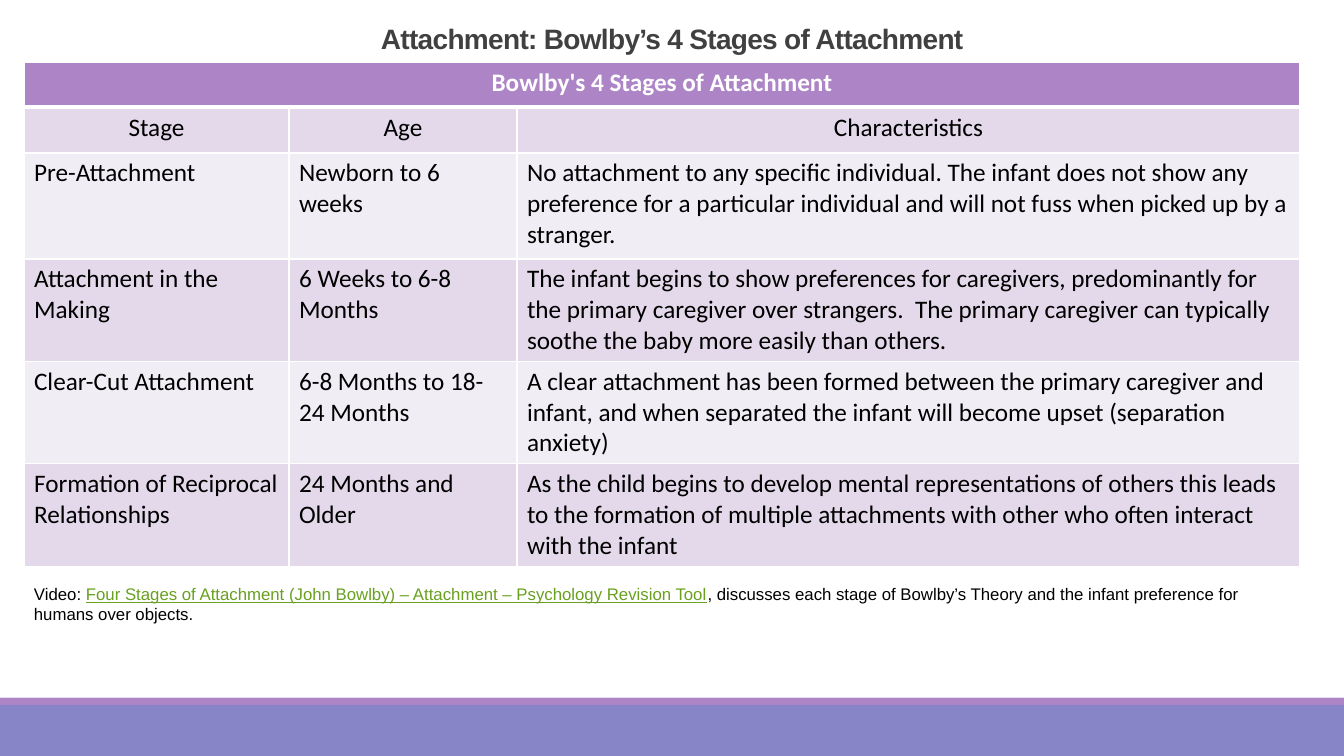
"""Builds the slide on Bowlby's four stages of attachment."""
from dataclasses import dataclass

from lxml import etree
from pptx import Presentation
from pptx.dml.color import RGBColor
from pptx.enum.shapes import MSO_SHAPE
from pptx.enum.text import MSO_ANCHOR, MSO_AUTO_SIZE, PP_ALIGN
from pptx.oxml.ns import qn
from pptx.util import Emu, Pt

RECTANGLE = MSO_SHAPE.RECTANGLE
BOTTOM, TOP = MSO_ANCHOR.BOTTOM, MSO_ANCHOR.TOP
FIXED = MSO_AUTO_SIZE.NONE
CENTER, LEFT = PP_ALIGN.CENTER, PP_ALIGN.LEFT

HEADING = "Attachment: Bowlby’s 4 Stages of Attachment"
BANNER = "Bowlby's 4 Stages of Attachment"
STAGES = [
    ("Stage", "Age", "Characteristics"),
    ("Pre-Attachment", "Newborn to 6 weeks",
     "No attachment to any specific individual. The infant does not show any preference "
     "for a particular individual and will not fuss when picked up by a stranger."),
    ("Attachment in the Making", "6 Weeks to 6-8 Months",
     "The infant begins to show preferences for caregivers, predominantly for the primary "
     "caregiver over strangers.  The primary caregiver can typically soothe the baby more "
     "easily than others."),
    ("Clear-Cut Attachment", "6-8 Months to 18-24 Months",
     "A clear attachment has been formed between the primary caregiver and infant, and when "
     "separated the infant will become upset (separation anxiety)"),
    ("Formation of Reciprocal Relationships", "24 Months and Older",
     "As the child begins to develop mental representations of others this leads to the "
     "formation of multiple attachments with other who often interact with the infant"),
]
VIDEO_NOTE = [
    ("Video: ", False),
    ("Four Stages of Attachment (John Bowlby) – Attachment – Psychology Revision Tool", True),
    (", discusses each stage of Bowlby’s Theory and the infant preference for humans over "
     "objects.", False),
]

SLIDE_SIZE = (1344, 756)
HEADING_BOX = (115, 18, 1114, 42)
TABLE_ORIGIN = (24, 62)
COLUMN_WIDTHS = [265, 228, 783]
ROW_HEIGHTS = [45, 46, 106, 101, 101, 101]
NOTE_BOX = (24, 579, 1276, 50)
FOOTER_TOP, STRIPE_HEIGHT = 698, 7


@dataclass(frozen=True)
class Theme:
    heading_font: str = "Arial"
    table_font: str = "Calibri"
    heading_size: int = 20
    table_size: int = 18
    note_size: int = 12
    heading: str = "404040"
    text: str = "000000"
    white: str = "FFFFFF"
    link: str = "69A020"
    accent: str = "AD84C6"
    footer: str = "8784C7"
    bands: tuple = ("E3D9EA", "F1EDF5")


THEME = Theme()


def px(length):
    return Emu(round(length * 914400 / 100.8))


def box(*lengths):
    return [px(length) for length in lengths]


def add_run(paragraph, words, font, size, color, bold=False, underline=False):
    run = paragraph.add_run()
    run.text = words
    run.font.name, run.font.size = font, Pt(size)
    run.font.bold, run.font.underline = bold, underline
    run.font.color.rgb = RGBColor.from_string(color)
    return run


def add_bar(slide, top, height, color):
    bar = slide.shapes.add_shape(RECTANGLE, *box(0, top, SLIDE_SIZE[0], height))
    bar.shadow.inherit = False
    bar.fill.solid()
    bar.fill.fore_color.rgb = RGBColor.from_string(color)
    bar.line.fill.background()


def style_cell(cell, fill, bottom_width=1, top_width=1):
    properties = cell._tc.get_or_add_tcPr()
    for side, width in (("L", 1), ("R", 1), ("T", top_width), ("B", bottom_width)):
        border = etree.SubElement(properties, qn(f"a:ln{side}"), w=str(Pt(width)))
        solid = etree.SubElement(border, qn("a:solidFill"))
        etree.SubElement(solid, qn("a:srgbClr"), val=THEME.white)
    cell.fill.solid()
    cell.fill.fore_color.rgb = RGBColor.from_string(fill)
    cell.vertical_anchor = TOP


def add_heading(slide):
    title = slide.shapes.title
    title.left, title.top, title.width, title.height = box(*HEADING_BOX)
    frame = title.text_frame
    frame.auto_size, frame.vertical_anchor = FIXED, BOTTOM
    paragraph = frame.paragraphs[0]
    paragraph.alignment, paragraph.line_spacing = CENTER, 0.85
    run = add_run(paragraph, HEADING, THEME.heading_font, THEME.heading_size,
                  THEME.heading, bold=True)
    run.font._element.set("spc", "-50")


def add_stage_table(slide):
    table = slide.shapes.add_table(
        len(ROW_HEIGHTS), len(COLUMN_WIDTHS),
        *box(*TABLE_ORIGIN, sum(COLUMN_WIDTHS), sum(ROW_HEIGHTS))).table
    for column, width in zip(table.columns, COLUMN_WIDTHS):
        column.width = px(width)
    for row, height in zip(table.rows, ROW_HEIGHTS):
        row.height = px(height)

    for cell in table.rows[0].cells:
        style_cell(cell, THEME.accent, bottom_width=3)
    banner = table.cell(0, 0)
    banner.merge(table.cell(0, len(COLUMN_WIDTHS) - 1))
    paragraph = banner.text_frame.paragraphs[0]
    paragraph.alignment = CENTER
    add_run(paragraph, BANNER, THEME.table_font, THEME.table_size, THEME.white, bold=True)

    for number, stage in enumerate(STAGES):
        is_header = number == 0
        for cell, words in zip(table.rows[number + 1].cells, stage):
            style_cell(cell, THEME.bands[number % 2], top_width=3 if is_header else 1)
            paragraph = cell.text_frame.paragraphs[0]
            paragraph.alignment = CENTER if is_header else LEFT
            add_run(paragraph, words, THEME.table_font, THEME.table_size, THEME.text)


def add_video_note(slide):
    frame = slide.shapes.add_textbox(*box(*NOTE_BOX)).text_frame
    frame.word_wrap = True
    for words, linked in VIDEO_NOTE:
        add_run(frame.paragraphs[0], words, THEME.heading_font, THEME.note_size,
                THEME.link if linked else THEME.text, underline=linked)


def main():
    deck = Presentation()
    deck.slide_width, deck.slide_height = box(*SLIDE_SIZE)
    slide = deck.slides.add_slide(deck.slide_layouts[5])
    add_bar(slide, FOOTER_TOP, SLIDE_SIZE[1] - FOOTER_TOP, THEME.footer)
    add_bar(slide, FOOTER_TOP, STRIPE_HEIGHT, THEME.accent)
    add_stage_table(slide)
    add_heading(slide)
    add_video_note(slide)
    deck.save("out.pptx")


if __name__ == "__main__":
    main()
